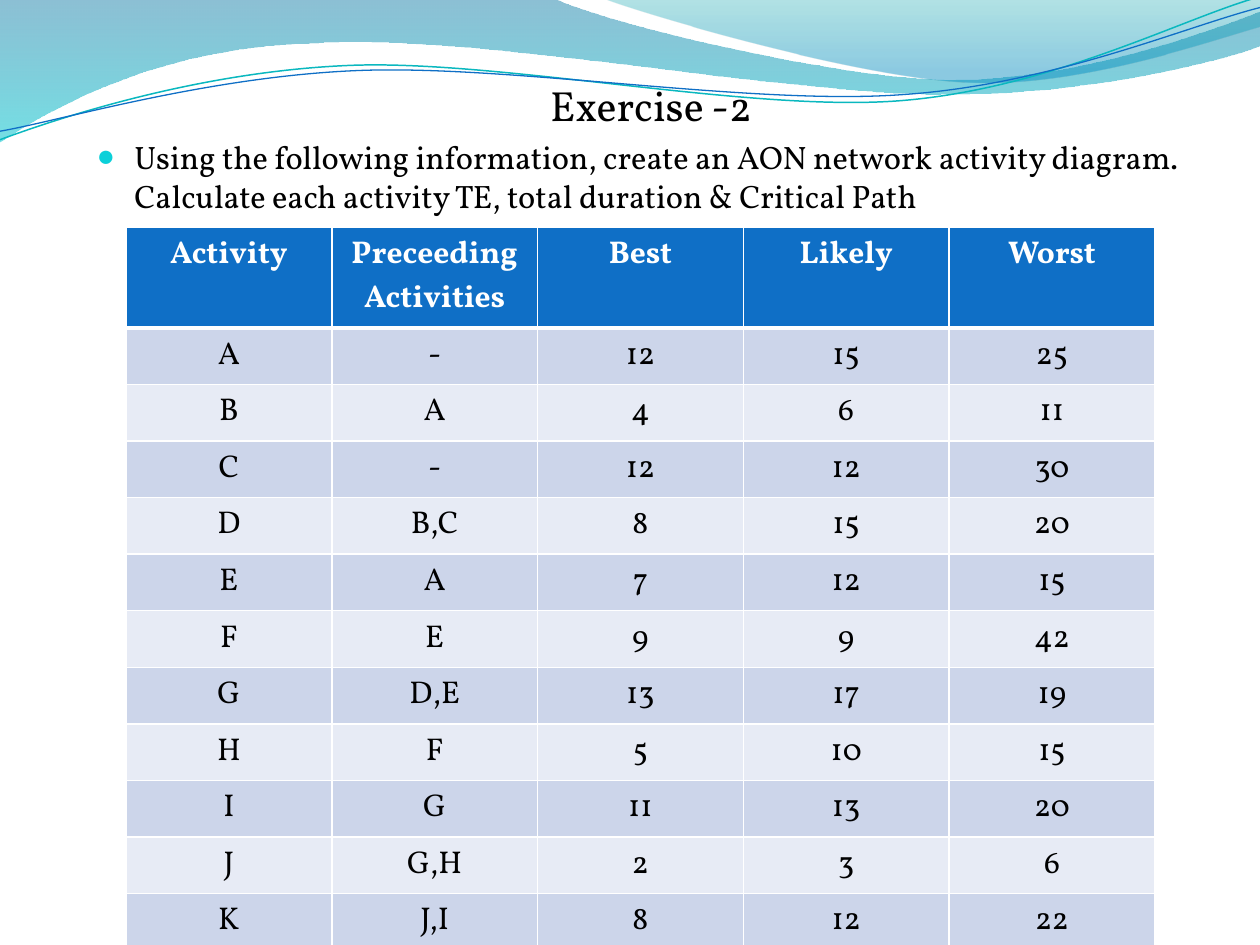
from lxml.etree import SubElement
from pptx import Presentation
from pptx.dml.color import RGBColor
from pptx.enum.text import MSO_AUTO_SIZE as AutoSize, PP_ALIGN as Align
from pptx.oxml.ns import qn
from pptx.util import Pt

FONT = "Vollkorn"
COLORS = {
    "text": "000000", "header_text": "FFFFFF", "bullet": "0BD0D9",
    "header": "0F6FC6", "odd_row": "CCD5EA", "even_row": "E7EBF5", "rule": "FFFFFF",
    "teal_line": "0AB8BF", "blue_line": "0F6FC6",
    "deep_blue": "0074A1", "aqua": "00C6CF", "sea": "00A1A9", "sky": "008BBF",
}

# Outlines in points: one pair is a corner, three pairs are a Bezier curve
WIDE_WAVE = [
    [(0, 0)], [(316.8, -0.7)],
    [(342.7, 12.2), (478.1, 45.4), (545.8, 45.4)],
    [(614.2, 45.4), (689.8, 18.7), (720, 6.5)],
    [(720.7, 25.9)],
    [(707.8, 31.7), (626.4, 54.7), (537.1, 54)],
    [(447.8, 54), (275, 20.2), (185, 24.5)],
    [(92.9, 25.9), (33.1, 59.8), (-0.7, 81.4)],
]
RIGHT_WAVE = [
    [(344.9, -0.7)],
    [(366.5, 7.9), (491, 44.6), (553.7, 46.8)],
    [(616.3, 49.7), (691.9, 23), (720, 15.1)],
    [(720, 0)],
]
# The two thin curves are given before they are tilted
CURVE_TILT = 357.3
TEAL_CURVE = [
    [(-1.4, 62.9)],
    [(33.8, 51.7), (114.1, 29.4), (199.8, 29.9)],
    [(284.9, 30.3), (425.8, 67.3), (512.4, 64.9)],
    [(599, 62.4), (676.4, 25.7), (720.2, 15.5)],
]
BLUE_CURVE = [
    [(-1.1, 58)],
    [(32.9, 53.8), (118.3, 32.5), (204.1, 33)],
    [(290.6, 33.4), (428.9, 63.8), (515.5, 61.4)],
    [(601.3, 59.6), (678.5, 30.1), (721.4, 21.3)],
]

HEADINGS = ["Activity", "Preceeding Activities", "Best", "Likely", "Worst"]
ACTIVITIES = [
    ("A", "-", 12, 15, 25),
    ("B", "A", 4, 6, 11),
    ("C", "-", 12, 12, 30),
    ("D", "B,C", 8, 15, 20),
    ("E", "A", 7, 12, 15),
    ("F", "E", 9, 9, 42),
    ("G", "D,E", 13, 17, 19),
    ("H", "F", 5, 10, 15),
    ("I", "G", 11, 13, 20),
    ("J", "G,H", 2, 3, 6),
    ("K", "J,I", 8, 12, 22),
]


def color(name):
    return RGBColor.from_string(COLORS[name])


def add_outline(slide, box, outline, closed):
    left, top = box[:2]
    points = [(Pt(left + x), Pt(top + y)) for segment in outline for x, y in segment]
    builder = slide.shapes.build_freeform(*points[0], scale=1.0)
    builder.add_line_segments(points[1:], close=closed)
    shape = builder.convert_to_shape()
    shape.shadow.inherit = False

    # Gather each run of three points into one Bezier segment
    steps = iter(list(shape.element.iter(qn("a:lnTo"))))
    for segment in outline[1:]:
        curve = next(steps)
        if len(segment) == 3:
            curve.tag = qn("a:cubicBezTo")
            for _ in range(2):
                step = next(steps)
                curve.append(step[0])
                step.getparent().remove(step)
    return shape


def add_waves(slide, box):
    # Translucent gradient waves: (position, colour, opacity in percent)
    for outline, stops in (
        (WIDE_WAVE, [(0, "deep_blue", 45), (1, "aqua", 55)]),
        (RIGHT_WAVE, [(0, "sea", 30), (0.8, "sky", 45)]),
    ):
        wave = add_outline(slide, box, outline, True)
        wave.line.fill.background()
        wave.fill.gradient()
        wave.fill.gradient_angle = 270
        for stop, (position, name, _) in zip(wave.fill.gradient_stops, stops):
            stop.position = position
            stop.color.rgb = color(name)
        gradient = wave.element.spPr.find(qn("a:gradFill"))
        for tint, (_, _, opacity) in zip(gradient.iter(qn("a:srgbClr")), stops):
            SubElement(tint, qn("a:alpha"), val=str(opacity * 1000))

    # Thin curves
    for outline, name, width in (
        (TEAL_CURVE, "teal_line", 0.85), (BLUE_CURVE, "blue_line", 0.75),
    ):
        curve = add_outline(slide, box, outline, False)
        curve.rotation = CURVE_TILT
        curve.fill.background()
        curve.line.color.rgb = color(name)
        curve.line.width = Pt(width)


def format_paragraph(paragraph, size, name, align, bold=False):
    paragraph.alignment = align
    for run in paragraph.runs:
        run.font.name = FONT
        run.font.size = Pt(size)
        run.font.bold = bold
        run.font.color.rgb = color(name)


def fill_task(task, box):
    task.left, task.top, task.width, task.height = map(Pt, box)
    task.element.getparent().append(task.element)  # in front of the waves
    frame = task.text_frame
    frame.auto_size = AutoSize.NONE
    frame.text = ("Exercise -2\nUsing the following information, create an AON network "
                  "activity diagram. Calculate each activity TE, total duration & Critical Path")
    heading, instruction = frame.paragraphs
    for paragraph, space in ((heading, 0), (instruction, 3.7)):
        paragraph.space_before = Pt(space)
        properties = paragraph._p.get_or_add_pPr()
        properties.set("marL", str(Pt(21.6)))
        properties.set("indent", str(Pt(-21.6)))
    SubElement(heading._p.pPr, qn("a:buNone"))
    bullet = instruction._p.pPr
    SubElement(SubElement(bullet, qn("a:buClr")), qn("a:srgbClr"), val=COLORS["bullet"])
    SubElement(bullet, qn("a:buSzPct"), val="95000")
    SubElement(bullet, qn("a:buChar"), char="●")
    format_paragraph(heading, 24.1, "text", Align.CENTER)
    format_paragraph(instruction, 18.5, "text", Align.LEFT)


def add_bottom_rule(cell, width):
    properties = cell._tc.get_or_add_tcPr()
    rule = SubElement(properties, qn("a:lnB"), w=str(Pt(width)))
    SubElement(SubElement(rule, qn("a:solidFill")), qn("a:srgbClr"), val=COLORS["rule"])
    properties.insert(0, rule)


def add_activity_table(slide, box):
    rows = [HEADINGS, *ACTIVITIES]
    table = slide.shapes.add_table(len(rows), len(HEADINGS), *map(Pt, box)).table
    row_height = 29.2
    for index, (row, values) in enumerate(zip(table.rows, rows)):
        is_header = index == 0
        row.height = Pt(box[3] - row_height * len(ACTIVITIES) if is_header else row_height)
        fill = "header" if is_header else "odd_row" if index % 2 else "even_row"
        for cell, value in zip(row.cells, values):
            cell.text = str(value)
            cell.fill.solid()
            cell.fill.fore_color.rgb = color(fill)
            if is_header:
                add_bottom_rule(cell, 3)
            format_paragraph(cell.text_frame.paragraphs[0], 18,
                             "header_text" if is_header else "text",
                             Align.CENTER, is_header)


def main():
    deck = Presentation()
    deck.slide_width, deck.slide_height = Pt(720), Pt(540)
    slide = deck.slides.add_slide(deck.slide_layouts[1])
    title = slide.shapes.title.element
    title.getparent().remove(title)

    add_waves(slide, (0, 0, 720, 82))
    fill_task(slide.placeholders[1], (48, 42, 648, 75.6))
    add_activity_table(slide, (72, 130, 588, 371.5))
    deck.save("out.pptx")


if __name__ == "__main__":
    main()
